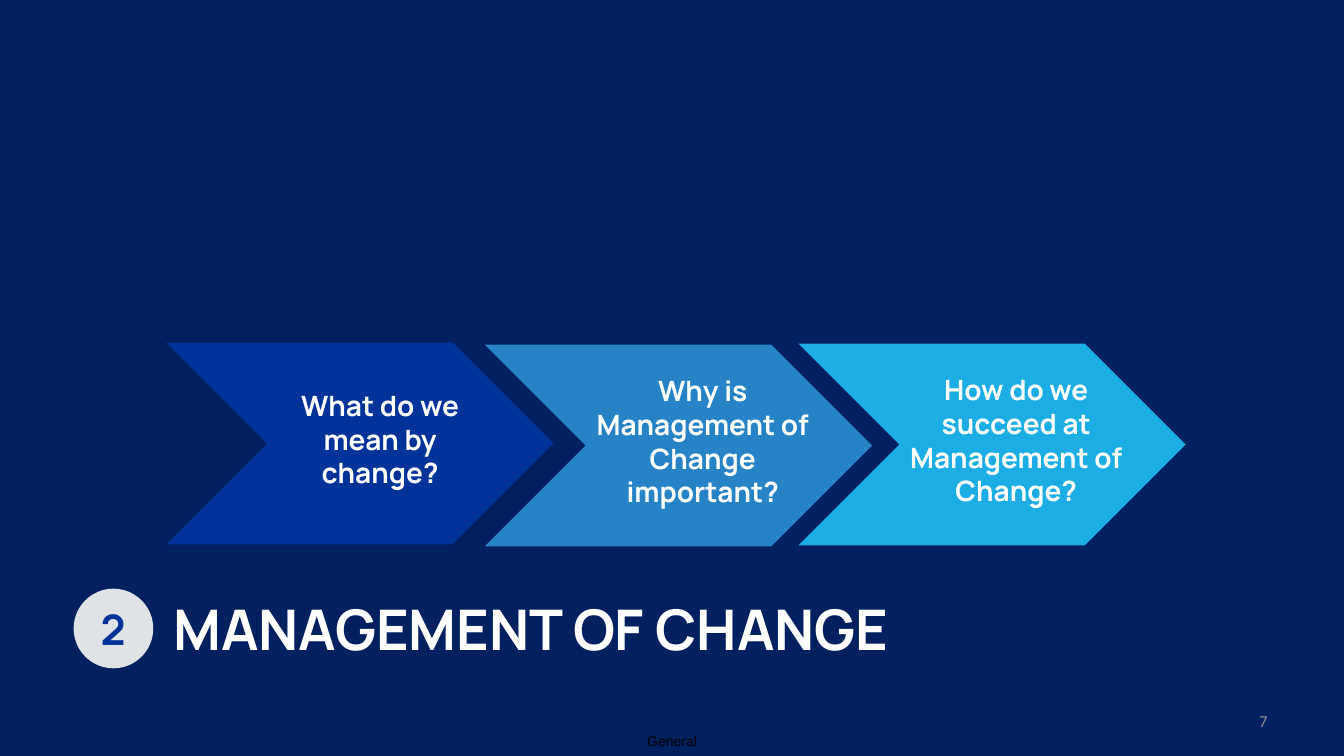
from dataclasses import dataclass

from pptx import Presentation
from pptx.dml.color import RGBColor
from pptx.enum.shapes import MSO_SHAPE
from pptx.enum.text import MSO_ANCHOR, PP_ALIGN
from pptx.slide import Slide
from pptx.util import Inches, Pt


@dataclass(frozen=True)
class Theme:
    background: str = "002060"
    white: str = "FFFFFF"
    black: str = "000000"
    grey: str = "8C8C8C"
    badge: str = "DFE3E5"
    navy: str = "003399"
    blue: str = "2683C6"
    sky: str = "1CADE4"
    heading_font: str = "Manrope"
    number_font: str = "Calibri"
    label_font: str = "Arial"
    title_size: int = 40
    badge_size: int = 30
    step_size: int = 20
    number_size: int = 12
    label_size: int = 10


@dataclass(frozen=True)
class Area:
    left: float
    top: float
    width: float
    height: float

    def lengths(self) -> tuple[int, int, int, int]:
        return Inches(self.left), Inches(self.top), Inches(self.width), Inches(self.height)


@dataclass(frozen=True)
class Caption:
    text: str
    area: Area
    size: int
    color: str
    font: str
    bold: bool = False
    align: PP_ALIGN = PP_ALIGN.CENTER
    wrap: bool = True
    space_after: int = 0


@dataclass(frozen=True)
class Step:
    text: str
    color: str
    left: float
    top: float
    text_area: Area


THEME = Theme()
CHEVRON_WIDTH, CHEVRON_HEIGHT = 3.84, 2

STEPS = [
    Step("What do we mean by change?", THEME.navy, 1.65, 3.4, Area(2.69, 3.8, 2.16, 1.11)),
    Step("Why is Management of Change important?", THEME.blue, 4.81, 3.42,
         Area(5.93, 3.65, 2.34, 1.45)),
    Step("How do we succeed at Management of Change?", THEME.sky, 7.92, 3.41,
         Area(8.91, 3.64, 2.34, 1.45)),
]
STEPS[1] = Step(STEPS[1].text, STEPS[1].color, STEPS[1].left, STEPS[1].top,
                Area(5.8, 3.65, 2.34, 1.45))

CAPTIONS = [
    Caption("MANAGEMENT OF CHANGE", Area(1.62, 5.49, 11.33, 1.49), THEME.title_size,
            THEME.white, THEME.heading_font, bold=True, align=PP_ALIGN.LEFT),
    Caption("2", Area(0.9, 5.93, 0.44, 0.61), THEME.badge_size,
            THEME.navy, THEME.heading_font, bold=True, wrap=False),
    Caption("7", Area(9.56, 6.95, 3.11, 0.4), THEME.number_size,
            THEME.grey, THEME.number_font, align=PP_ALIGN.RIGHT),
    Caption("General", Area(6.27, 7.22, 0.79, 0.27), THEME.label_size,
            THEME.black, THEME.label_font, wrap=False),
]


def add_block(slide: Slide, kind: MSO_SHAPE, area: Area, color: str) -> None:
    block = slide.shapes.add_shape(kind, *area.lengths())
    block.shadow.inherit = False
    block.fill.solid()
    block.fill.fore_color.rgb = RGBColor.from_string(color)
    block.line.fill.background()


def add_caption(slide: Slide, caption: Caption) -> None:
    box = slide.shapes.add_textbox(*caption.area.lengths())
    frame = box.text_frame
    frame.text = caption.text
    frame.word_wrap = caption.wrap
    frame.vertical_anchor = MSO_ANCHOR.MIDDLE
    para = frame.paragraphs[0]
    para.alignment = caption.align
    para.space_after = Pt(caption.space_after)
    span = para.runs[0]
    span.font.name = caption.font
    span.font.size = Pt(caption.size)
    span.font.bold = caption.bold
    span.font.color.rgb = RGBColor.from_string(caption.color)


def add_step(slide: Slide, step: Step) -> None:
    area = Area(step.left, step.top, CHEVRON_WIDTH, CHEVRON_HEIGHT)
    add_block(slide, MSO_SHAPE.CHEVRON, area, step.color)
    add_caption(slide, Caption(step.text, step.text_area, THEME.step_size, THEME.white,
                               THEME.heading_font, bold=True, space_after=6))


def main() -> None:
    deck = Presentation()
    deck.slide_width, deck.slide_height = Inches(13.33), Inches(7.5)
    page = deck.slides.add_slide(deck.slide_layouts[6])
    page.background.fill.solid()
    page.background.fill.fore_color.rgb = RGBColor.from_string(THEME.background)

    add_block(page, MSO_SHAPE.OVAL, Area(0.73, 5.84, 0.79, 0.79), THEME.badge)
    for step in STEPS:
        add_step(page, step)
    for caption in CAPTIONS:
        add_caption(page, caption)

    deck.save("out.pptx")


if __name__ == "__main__":
    main()
